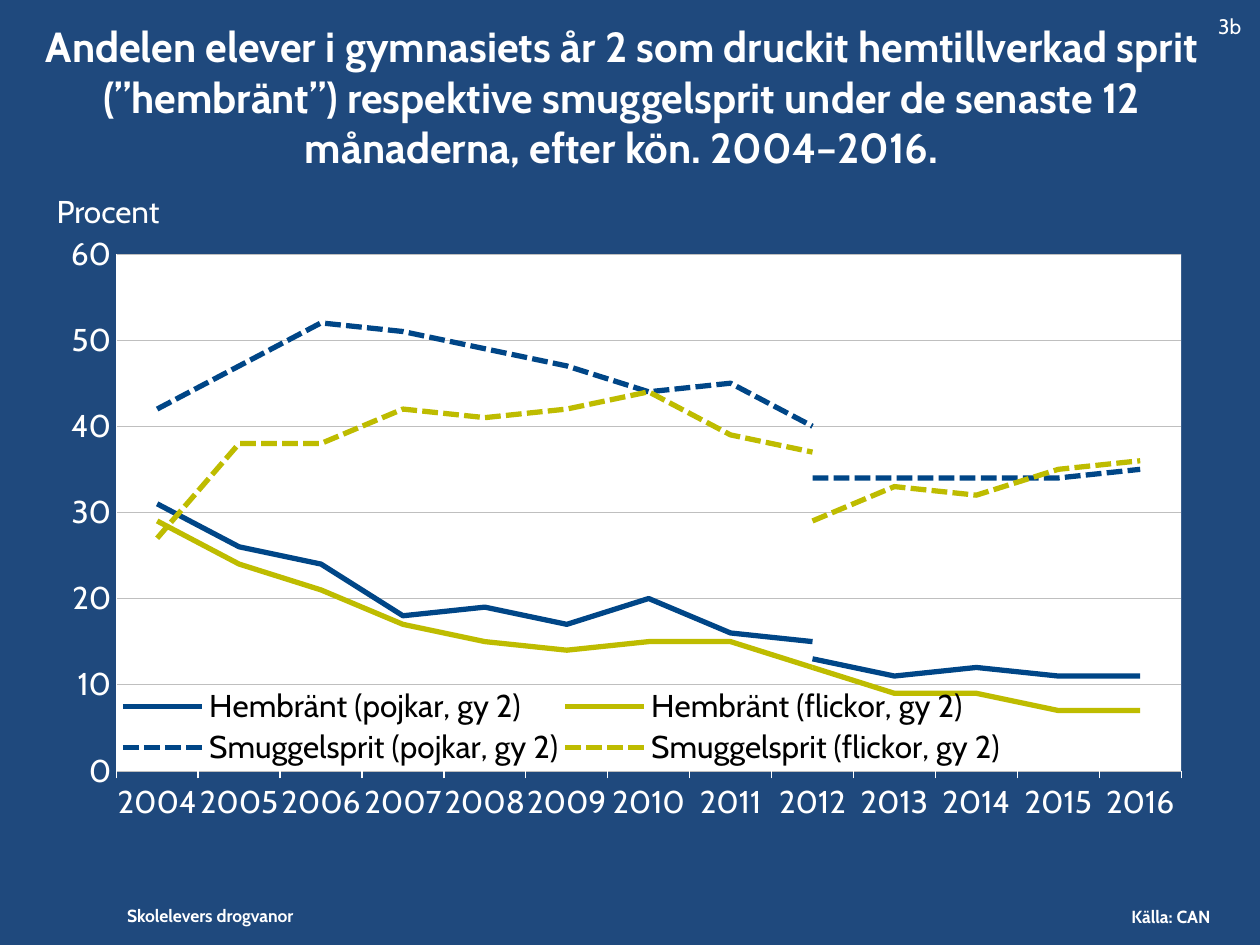
"""Build a slide with a line chart of home-made and smuggled spirits among pupils."""
from dataclasses import dataclass
from typing import Any

from pptx import Presentation
from pptx.chart.data import CategoryChartData
from pptx.dml.color import RGBColor
from pptx.enum.chart import XL_CHART_TYPE, XL_LEGEND_POSITION, XL_TICK_MARK
from pptx.enum.dml import MSO_LINE
from pptx.enum.text import MSO_ANCHOR, PP_ALIGN
from pptx.oxml import parse_xml
from pptx.oxml.ns import nsdecls, qn
from pptx.util import Pt

WHITE, BLACK, NAVY, GREY = "FFFFFF", "000000", "1F497D", "BFBFBF"
BLUE, LIME = "004687", "BEBC00"
YEARS = range(2004, 2017)
SPLIT = 2012


@dataclass
class Label:
    text: str
    box: tuple[float, float, float, float]
    size: float
    bold: bool = False
    align: Any = PP_ALIGN.LEFT
    anchor: Any = MSO_ANCHOR.TOP


@dataclass
class Trend:
    name: str
    old: list[int]
    new: list[int]
    tint: str
    dash: Any = MSO_LINE.SOLID


LABELS = [
    Label("Skolelevers drogvanor", (65.5, 513.4, 120, 32), 10, True),
    Label("Källa: CAN", (639.4, 514, 68, 20), 10, True),
    Label("Andelen elever i gymnasiets år 2 som druckit hemtillverkad sprit "
          "(”hembränt”) respektive smuggelsprit under de senaste 12 "
          "månaderna, efter kön. 2004–2016.",
          (16.5, 10, 677.5, 90), 24, True, PP_ALIGN.CENTER, MSO_ANCHOR.MIDDLE),
    Label("3b", (689, 4.3, 31, 21.6), 12),
    Label("Procent", (25.2, 106, 80.6, 29), 18, anchor=MSO_ANCHOR.MIDDLE),
]

TRENDS = [
    Trend("Hembränt (pojkar, gy 2)", [31, 26, 24, 18, 19, 17, 20, 16, 15],
          [13, 11, 12, 11, 11], BLUE),
    Trend("Hembränt (flickor, gy 2)", [29, 24, 21, 17, 15, 14, 15, 15, 12],
          [12, 9, 9, 7, 7], LIME),
    Trend("Smuggelsprit (pojkar, gy 2)", [42, 47, 52, 51, 49, 47, 44, 45, 40],
          [34, 34, 34, 34, 35], BLUE, MSO_LINE.SQUARE_DOT),
    Trend("Smuggelsprit (flickor, gy 2)", [27, 38, 38, 42, 41, 42, 44, 39, 37],
          [29, 33, 32, 35, 36], LIME, MSO_LINE.SQUARE_DOT),
]


def apply(item: Any, **form: Any) -> None:
    for key, val in form.items():
        setattr(item, key, val)


def rgb(code: str) -> RGBColor:
    return RGBColor.from_string(code)


def style(font: Any, size: float, tint: str = WHITE, bold: bool = False) -> None:
    apply(font, name="Cabin", size=Pt(size), bold=bold)
    font.color.rgb = rgb(tint)


def stroke(line: Any, tint: str, width: float) -> None:
    line.color.rgb = rgb(tint)
    line.width = Pt(width)


def write(slide: Any, label: Label) -> None:
    frame = slide.shapes.add_textbox(*map(Pt, label.box)).text_frame
    apply(frame, word_wrap=True, vertical_anchor=label.anchor)
    para = frame.paragraphs[0]
    para.alignment = label.align
    run = para.add_run()
    run.text = label.text
    style(run.font, label.size, bold=label.bold)


def place(node: Any, index: int, inner: bool, *box: float) -> None:
    for old in node.findall(qn("c:layout")):
        node.remove(old)
    modes = '<c:xMode val="edge"/><c:yMode val="edge"/>'
    sizes = "".join(f'<c:{tag} val="{val}"/>' for tag, val in zip("xywh", box))
    target = '<c:layoutTarget val="inner"/>' if inner else ""
    node.insert(index, parse_xml(
        f'<c:layout {nsdecls("c")}><c:manualLayout>{target}{modes}{sizes}'
        "</c:manualLayout></c:layout>"))


def set_key(chart: Any) -> None:
    chart.has_legend = True
    key = chart.legend
    apply(key, position=XL_LEGEND_POSITION.TOP, include_in_layout=False)
    style(key.font, 18, BLACK)
    node = key._element
    for pos in range(len(TRENDS)):
        node.insert(pos + 1, parse_xml(
            f'<c:legendEntry {nsdecls("c")}><c:idx val="{2 * pos + 1}"/>'
            '<c:delete val="1"/></c:legendEntry>'))
    place(node, len(TRENDS) + 1, False, 0.05, 0.76, 0.78, 0.13)


def set_axes(chart: Any) -> None:
    years, share = chart.category_axis, chart.value_axis
    apply(years, major_tick_mark=XL_TICK_MARK.OUTSIDE,
          minor_tick_mark=XL_TICK_MARK.NONE, has_major_gridlines=False)
    apply(share, major_tick_mark=XL_TICK_MARK.NONE,
          minor_tick_mark=XL_TICK_MARK.NONE, has_major_gridlines=True,
          minimum_scale=0, maximum_scale=60, major_unit=10)
    apply(share.tick_labels, number_format="0", number_format_is_linked=False)
    for axis, width in ((years, 0.75), (share, 0.25)):
        style(axis.tick_labels.font, 18)
        stroke(axis.format.line, WHITE, width)
    stroke(share.major_gridlines.format.line, GREY, 0.25)
    for node in share._element.iter(qn("c:crossBetween")):
        node.set("val", "midCat")


def plot(slide: Any) -> None:
    data = CategoryChartData(number_format="0")
    data.categories = [str(year) for year in YEARS]
    late = SPLIT - YEARS[0]
    for pos, trend in enumerate(TRENDS, 1):
        gap = [None] * (len(YEARS) - len(trend.old))
        data.add_series(trend.name, trend.old + gap)
        data.add_series(f"Series {2 * pos}", [None] * late + trend.new)
    chart = slide.shapes.add_chart(
        XL_CHART_TYPE.LINE, Pt(33.8), Pt(106.6), Pt(652.3), Pt(374.4), data).chart
    chart.has_title = False
    style(chart.font, 18)
    for pos, series in enumerate(chart.plots[0].series):
        trend = TRENDS[pos // 2]
        series.smooth = False
        stroke(series.format.line, trend.tint, 3)
        series.format.line.dash_style = trend.dash
    chart.plots[0].vary_by_categories = False
    set_axes(chart)
    set_key(chart)
    area = next(chart._chartSpace.iter(qn("c:plotArea")))
    place(area, 0, True, 0.05, 0.103, 0.933, 0.789)
    area.append(parse_xml(
        f'<c:spPr {nsdecls("c", "a")}><a:solidFill><a:srgbClr val="{WHITE}"/>'
        "</a:solidFill></c:spPr>"))


def main() -> None:
    deck = Presentation()
    apply(deck, slide_width=Pt(720), slide_height=Pt(540))
    slide = deck.slides.add_slide(deck.slide_layouts[6])
    fill = slide.background.fill
    fill.solid()
    fill.fore_color.rgb = rgb(NAVY)
    plot(slide)
    for label in LABELS:
        write(slide, label)
    deck.save("out.pptx")


if __name__ == "__main__":
    main()
